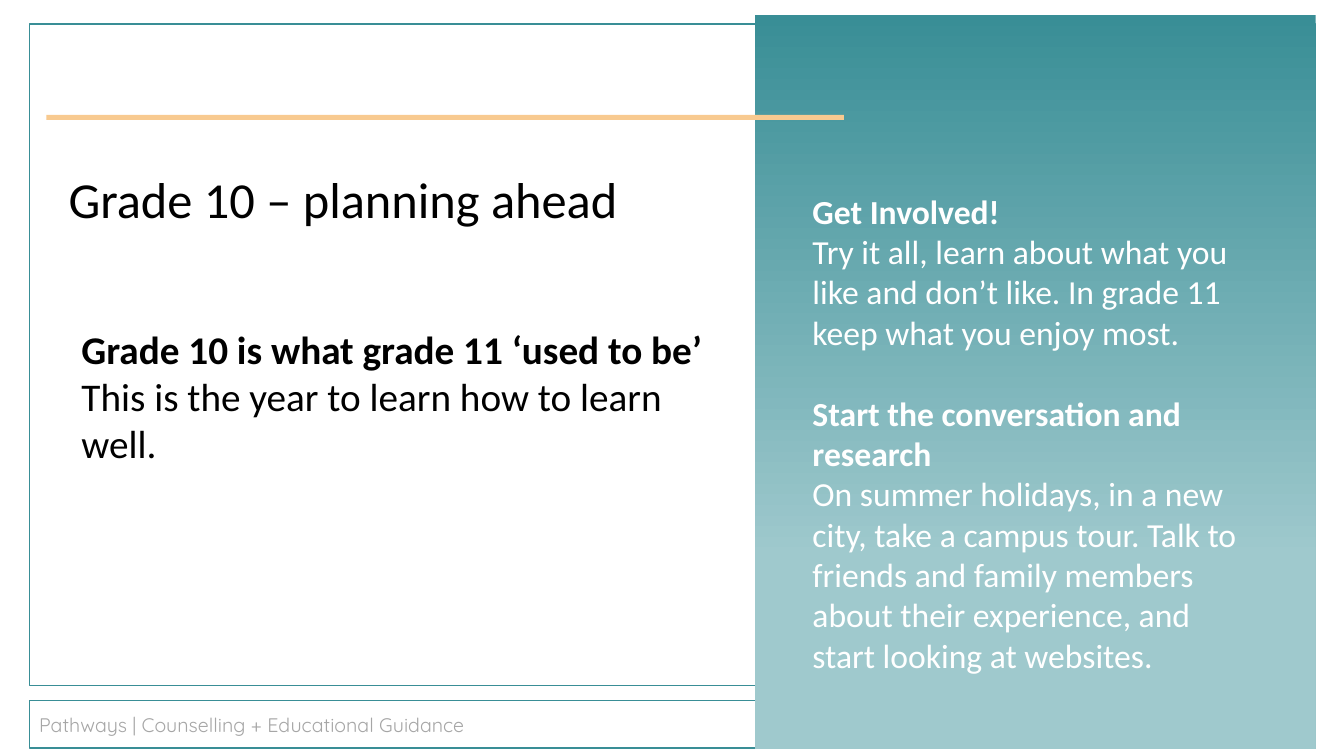
from dataclasses import dataclass

from pptx import Presentation
from pptx.dml.color import RGBColor
from pptx.enum.shapes import MSO_SHAPE
from pptx.enum.text import MSO_ANCHOR, MSO_AUTO_SIZE, PP_ALIGN
from pptx.util import Inches, Pt


@dataclass(frozen=True)
class Theme:
    teal: str = "398E96"
    mist: str = "9FC9CD"
    apricot: str = "F8CA90"
    ink: str = "000000"
    white: str = "FFFFFF"
    grey: str = "A6A6A6"
    font: str = "Calibri"
    footer_font: str = "Quicksand"
    title_size: int = 36
    message_size: int = 28
    advice_size: int = 24
    footer_size: int = 14


THEME = Theme()
TITLE = "Grade 10 – planning ahead"
FOOTER = "Pathways | Counselling + Educational Guidance"
MESSAGE = [
    ("Grade 10 is what grade 11 ‘used to be’",
     "This is the year to learn how to learn well."),
]
ADVICE = [
    ("Get Involved!",
     "Try it all, learn about what you like and don’t like. "
     "In grade 11 keep what you enjoy most."),
    ("Start the conversation and research",
     "On summer holidays, in a new city, take a campus tour. "
     "Talk to friends and family members about their experience, "
     "and start looking at websites."),
]

FRAME_LEFT, FRAME_WIDTH = 0.29, 12.76
PANEL_WIDTH = 5.56
PANEL_LEFT = FRAME_LEFT + FRAME_WIDTH - PANEL_WIDTH


def color(value):
    return RGBColor.from_string(value)


def style(paragraph, size, ink, font=THEME.font, bold=False):
    paragraph.alignment = PP_ALIGN.LEFT
    for run in paragraph.runs:
        run.font.name = font
        run.font.size = Pt(size)
        run.font.bold = bold
        run.font.color.rgb = color(ink)


def add_box(slide, *box):
    rectangle = slide.shapes.add_shape(MSO_SHAPE.RECTANGLE, *map(Inches, box))
    rectangle.shadow.inherit = False
    return rectangle


def add_outline(slide, *box):
    outline = add_box(slide, *box)
    outline.fill.background()
    outline.line.color.rgb = color(THEME.teal)
    outline.line.width = Pt(1)
    return outline


def add_sections(slide, sections, box, size, ink):
    frame = slide.shapes.add_textbox(*map(Inches, box)).text_frame
    frame.word_wrap = True
    frame.text = "\n".join(line for section in sections for line in section)
    for index, paragraph in enumerate(frame.paragraphs):
        heading = index % 2 == 0
        style(paragraph, size, ink, bold=heading)
        if heading and index:
            paragraph.space_before = Pt(size * 1.22)


def main():
    deck = Presentation()
    deck.slide_width, deck.slide_height = Inches(13.33), Inches(7.5)
    slide = deck.slides.add_slide(deck.slide_layouts[5])

    footer = add_outline(slide, FRAME_LEFT, 6.95, FRAME_WIDTH, 0.47).text_frame
    footer.text = FOOTER
    footer.vertical_anchor = MSO_ANCHOR.MIDDLE
    style(footer.paragraphs[0], THEME.footer_size, THEME.grey, THEME.footer_font)

    add_outline(slide, FRAME_LEFT, 0.24, FRAME_WIDTH, 6.56)
    add_sections(slide, MESSAGE, (0.71, 3.18, 6.35, 3.2),
                 THEME.message_size, THEME.ink)

    panel = add_box(slide, PANEL_LEFT, 0.15, PANEL_WIDTH, 7.28)
    panel.line.fill.background()
    panel.fill.gradient()
    panel.fill.gradient_angle = 270
    stops = ((0, THEME.teal), (0.74, THEME.mist))
    for stop, (position, shade) in zip(panel.fill.gradient_stops, stops):
        stop.position = position
        stop.color.rgb = color(shade)

    rule = add_box(slide, 0.46, 1.14, 7.91, 0.05)
    rule.fill.solid()
    rule.fill.fore_color.rgb = color(THEME.apricot)
    rule.line.fill.background()

    title = slide.shapes.title
    title.left, title.top, title.width, title.height = map(
        Inches, (0.58, 1.43, 6.71, 1.15))
    heading = title.text_frame
    heading.text = TITLE
    heading.word_wrap = True
    heading.auto_size = MSO_AUTO_SIZE.NONE
    heading.vertical_anchor = MSO_ANCHOR.MIDDLE
    heading.paragraphs[0].line_spacing = 0.9
    style(heading.paragraphs[0], THEME.title_size, THEME.ink)

    add_sections(slide, ADVICE, (7.96, 1.84, 4.59, 5.25),
                 THEME.advice_size, THEME.white)
    deck.save("out.pptx")


if __name__ == "__main__":
    main()
